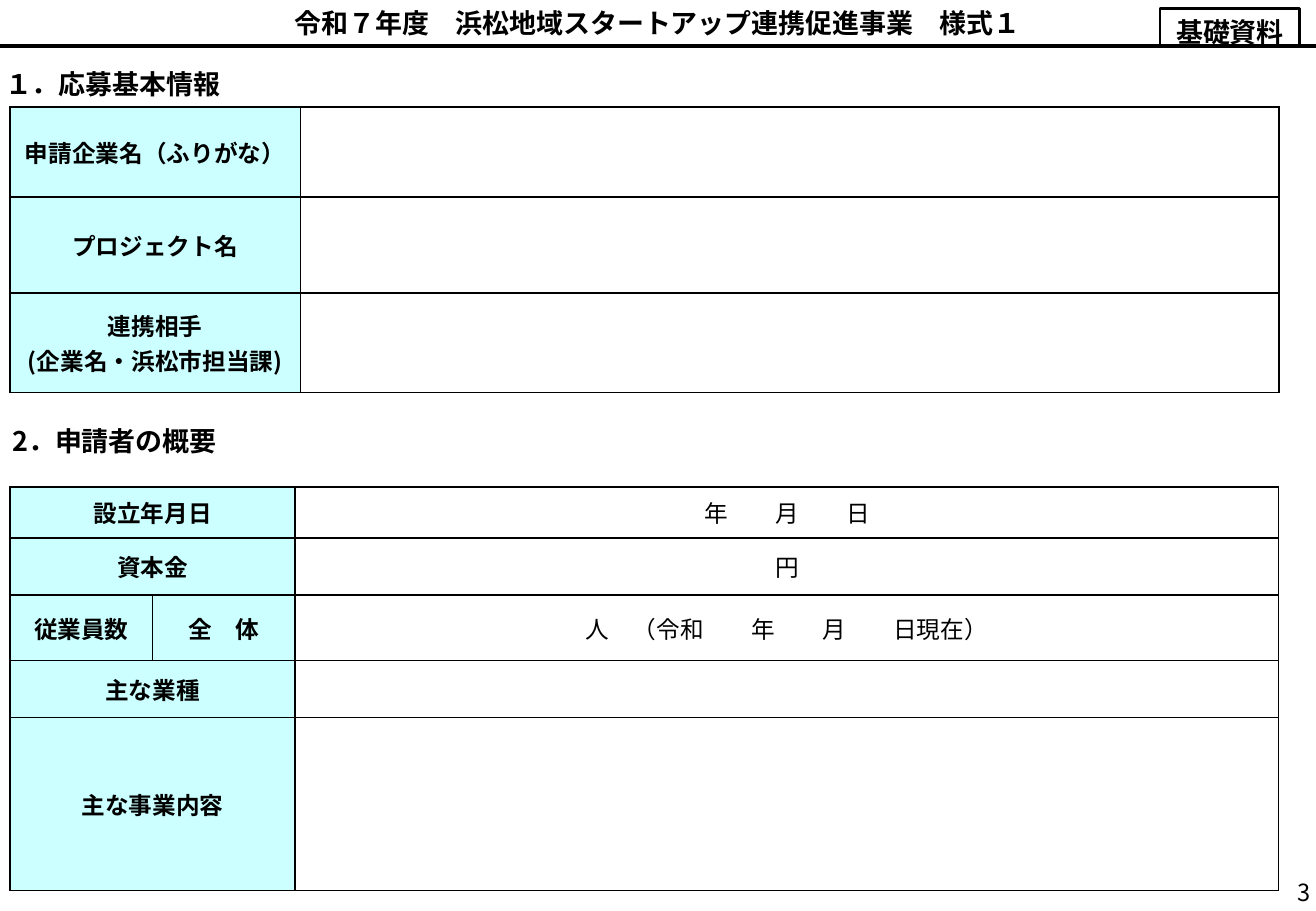
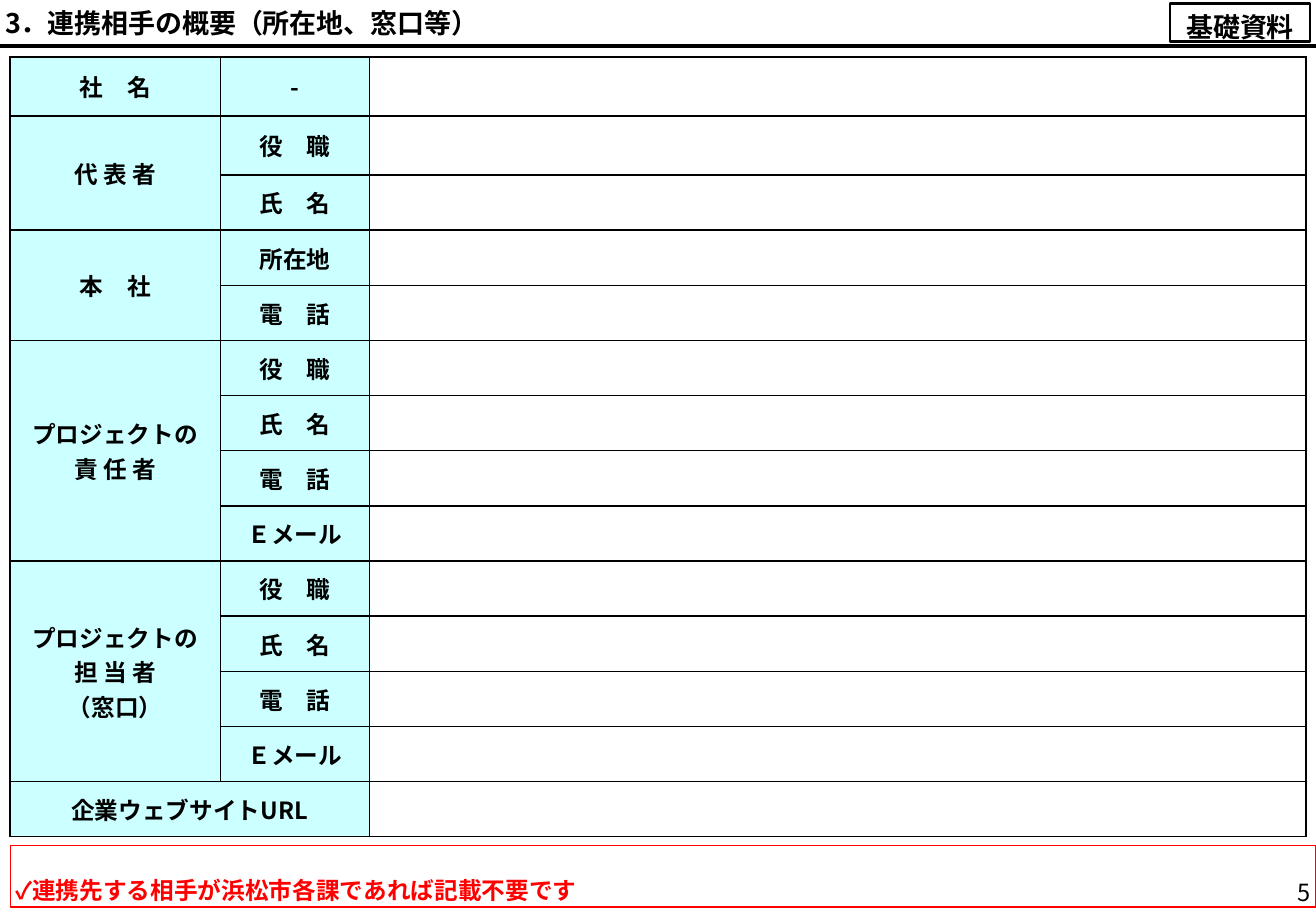
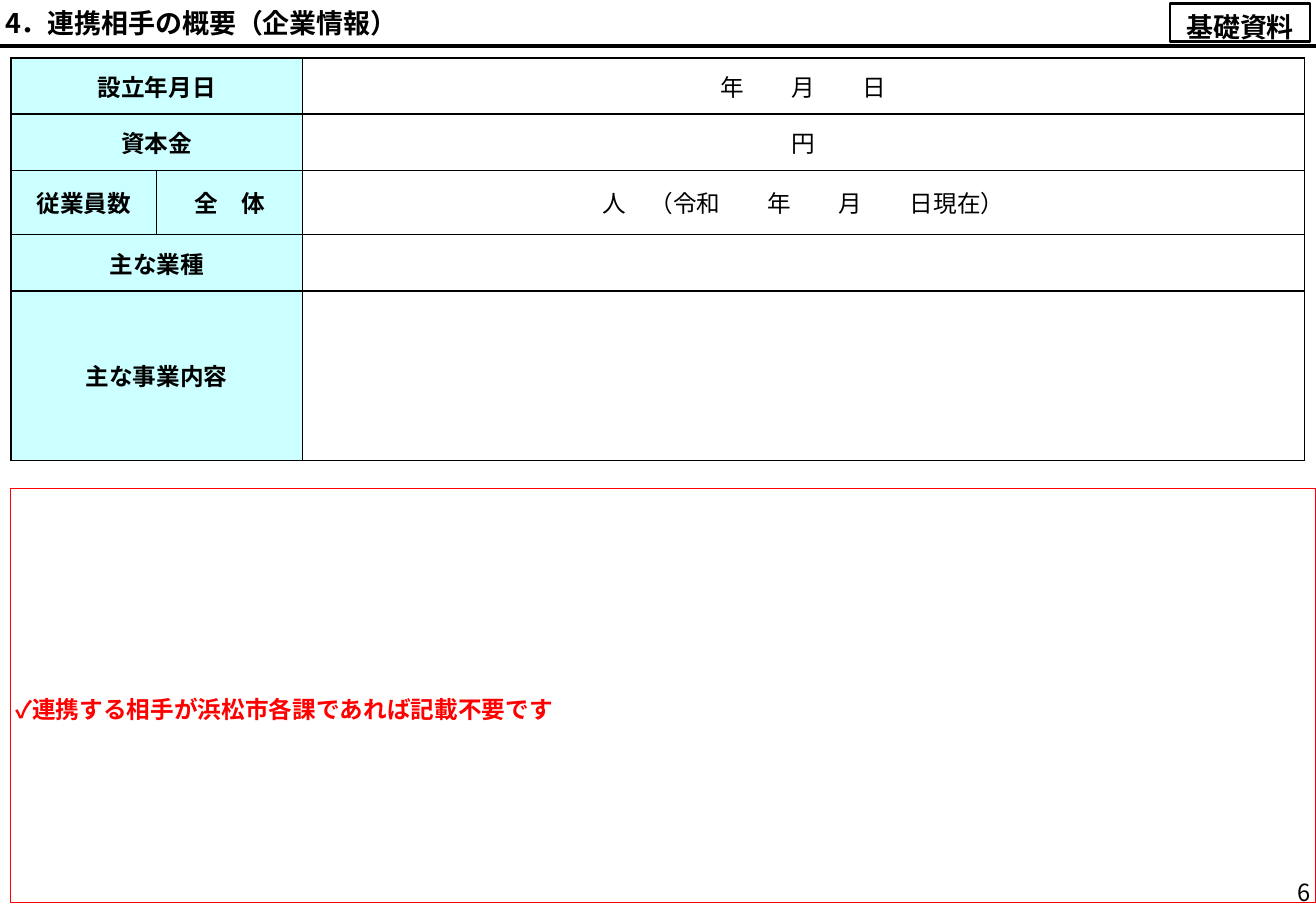
from lxml.etree import SubElement
from pptx import Presentation
from pptx.dml.color import RGBColor
from pptx.enum.lang import MSO_LANGUAGE_ID
from pptx.enum.shapes import MSO_CONNECTOR, MSO_SHAPE
from pptx.enum.text import MSO_ANCHOR, MSO_AUTO_SIZE, PP_ALIGN
from pptx.oxml.ns import qn
from pptx.util import Pt

BLACK = RGBColor(0x00, 0x00, 0x00)
RED = RGBColor(0xFF, 0x00, 0x00)
LABEL_FILL = RGBColor(0xCC, 0xFF, 0xFF)
FONT_NAME = "Noto Sans CJK JP"
SLIDE_WIDTH = 780
SLIDE_HEIGHT = 540
HEADER_HEIGHT = 27.4
INSET = 3

HEADING = {"size": Pt(16), "bold": True}
LABEL = {"size": Pt(14), "bold": True}
VALUE = {"size": Pt(14), "bold": False}

BASIC_ROWS = [
    ("申請企業名（ふりがな）", ""),
    ("プロジェクト名", ""),
    ("連携相手\n(企業名・浜松市担当課)", ""),
]
COMPANY_ROWS = [
    ("設立年月日", None, "年　　月　　日"),
    ("資本金", None, "円"),
    ("従業員数", "全　体", "人　（令和　　年　　月　　日現在）"),
    ("主な業種", None, ""),
    ("主な事業内容", None, ""),
]
PERSON_FIELDS = ["役　職", "氏　名", "電　話", "Ｅメール"]
PARTNER_GROUPS = [
    ("社　名", ["-"]),
    ("代 表 者", PERSON_FIELDS[:2]),
    ("本　社", ["所在地", "電　話"]),
    ("プロジェクトの\n責 任 者", PERSON_FIELDS),
    ("プロジェクトの\n担 当 者\n（窓口）", PERSON_FIELDS),
    ("企業ウェブサイトURL", [None]),
]
PARTNER_ROWS = [
    (None if index else group, field, "")
    for group, fields in PARTNER_GROUPS
    for index, field in enumerate(fields)
]


def points(*values):
    return [Pt(value) for value in values]


def set_attributes(target, values):
    for name, value in values.items():
        setattr(target, name, value)


def write_text(text_frame, text, formats, alignment=PP_ALIGN.LEFT, color=BLACK):
    text_frame.text = text
    for paragraph in text_frame.paragraphs:
        paragraph.alignment = alignment
        for run in paragraph.runs:
            set_attributes(run.font, formats)
            run.font.name = FONT_NAME
            run.font.language_id = MSO_LANGUAGE_ID.JAPANESE
            run.font.color.rgb = color
            east_asian = SubElement(run.font._element, qn("a:ea"))
            east_asian.set("typeface", FONT_NAME)


def format_frame(text_frame, top=INSET, bottom=INSET):
    set_attributes(text_frame, {
        "word_wrap": True,
        "auto_size": MSO_AUTO_SIZE.NONE,
        "vertical_anchor": MSO_ANCHOR.MIDDLE,
        "margin_left": Pt(INSET),
        "margin_right": Pt(INSET),
        "margin_top": Pt(top),
        "margin_bottom": Pt(bottom),
    })


def add_text(slide, box, text, formats, alignment=PP_ALIGN.LEFT):
    text_frame = slide.shapes.add_textbox(*points(*box)).text_frame
    format_frame(text_frame)
    write_text(text_frame, text, formats, alignment)


def add_box(slide, box, color, line_width, text, formats, alignment, top, bottom):
    shape = slide.shapes.add_shape(MSO_SHAPE.RECTANGLE, *points(*box))
    shape.shadow.inherit = False
    shape.fill.background()
    shape.line.color.rgb = color
    shape.line.width = Pt(line_width)
    format_frame(shape.text_frame, top, bottom)
    write_text(shape.text_frame, text, formats, alignment, color)


def add_badge(slide, left, top):
    add_box(slide, (left, top, 82.8, 22.3), BLACK, 1.5, "基礎資料",
            HEADING, PP_ALIGN.CENTER, 8.5, INSET)


def add_note(slide, top, height, text):
    add_box(slide, (6, top, 774, height), RED, 0.75, text,
            LABEL, PP_ALIGN.LEFT, 16, 0)


def add_rule(slide):
    rule = slide.shapes.add_connector(
        MSO_CONNECTOR.STRAIGHT, *points(0, HEADER_HEIGHT, SLIDE_WIDTH, HEADER_HEIGHT))
    rule.line.color.rgb = BLACK
    rule.line.width = Pt(2)
    SubElement(rule._element.spPr, qn("a:effectLst"))


def add_borders(cell):
    properties = cell._tc.get_or_add_tcPr()
    for side in ("a:lnL", "a:lnR", "a:lnT", "a:lnB"):
        line = SubElement(properties, qn(side), w=str(Pt(1)))
        fill = SubElement(line, qn("a:solidFill"))
        SubElement(fill, qn("a:srgbClr"), val=str(BLACK))


def merge_empty(table, rows, row, column):
    last_row, last_column = row, column
    while last_column + 1 < len(rows[row]) and rows[row][last_column + 1] is None:
        last_column += 1
    while column == 0 and last_row + 1 < len(rows) and rows[last_row + 1][0] is None:
        last_row += 1
    if (last_row, last_column) != (row, column):
        table.cell(row, column).merge(table.cell(last_row, last_column))


def add_form(slide, left, top, widths, heights, rows):
    frame = slide.shapes.add_table(
        len(rows), len(widths), *points(left, top, sum(widths), sum(heights)))
    table = frame.table
    set_attributes(table, {"first_row": False, "horz_banding": False})
    for column, width in zip(table.columns, widths):
        column.width = Pt(width)
    for row, height in zip(table.rows, heights):
        row.height = Pt(height)
    for row, texts in enumerate(rows):
        for column, text in enumerate(texts):
            cell = table.cell(row, column)
            is_label = column < len(widths) - 1
            add_borders(cell)
            if is_label:
                cell.fill.solid()
                cell.fill.fore_color.rgb = LABEL_FILL
            else:
                cell.fill.background()
            margins = ("margin_left", "margin_right", "margin_top", "margin_bottom")
            set_attributes(cell, dict.fromkeys(margins, Pt(INSET)))
            cell.vertical_anchor = MSO_ANCHOR.MIDDLE
            if text is not None:
                write_text(cell.text_frame, text, LABEL if is_label else VALUE,
                           PP_ALIGN.CENTER)
                merge_empty(table, rows, row, column)


def add_slide(presentation, title, number, alignment=PP_ALIGN.LEFT, badge=(693.6, 2.2)):
    slide = presentation.slides.add_slide(presentation.slide_layouts[5])
    shape = slide.shapes.title
    box = points(0, 0, SLIDE_WIDTH, HEADER_HEIGHT)
    set_attributes(shape, dict(zip(("left", "top", "width", "height"), box)))
    format_frame(shape.text_frame)
    write_text(shape.text_frame, title, HEADING, alignment)
    add_rule(slide)
    add_badge(slide, *badge)
    add_text(slide, (709.2, 517, 70.8, 23), number, VALUE, PP_ALIGN.RIGHT)
    return slide


def main():
    presentation = Presentation()
    presentation.slide_width = Pt(SLIDE_WIDTH)
    presentation.slide_height = Pt(SLIDE_HEIGHT)

    slide = add_slide(presentation, "令和７年度　浜松地域スタートアップ連携促進事業　様式１",
                      "3", PP_ALIGN.CENTER, (687.6, 5))
    add_text(slide, (0, 36, 228, HEADER_HEIGHT), "１．応募基本情報", HEADING)
    add_form(slide, 6, 63.4, [172, 580], [53.3, 56.9, 59], BASIC_ROWS)
    add_text(slide, (4.3, 247.7, 228, HEADER_HEIGHT), "2．申請者の概要", HEADING)
    add_form(slide, 6, 288.7, [84.5, 84.5, 583],
             [30.2, 33.8, 38.9, 33.8, 102.5], COMPANY_ROWS)

    slide = add_slide(presentation, "3．連携相手の概要（所在地、窓口等）", "5")
    add_form(slide, 6, 33.8, [124.6, 88.4, 555], [35] * 2 + [32.7] * 12, PARTNER_ROWS)
    add_note(slide, 501, 36.7, "✓連携先する相手が浜松市各課であれば記載不要です")

    slide = add_slide(presentation, "4．連携相手の概要（企業情報）", "6")
    add_form(slide, 6.5, 34.4, [86.4, 86.4, 594],
             [33.3, 33.3, 38.2, 33.3, 100.4], COMPANY_ROWS)
    add_note(slide, 289.4, 245.8, "✓連携する相手が浜松市各課であれば記載不要です")

    presentation.save("out.pptx")


if __name__ == "__main__":
    main()
